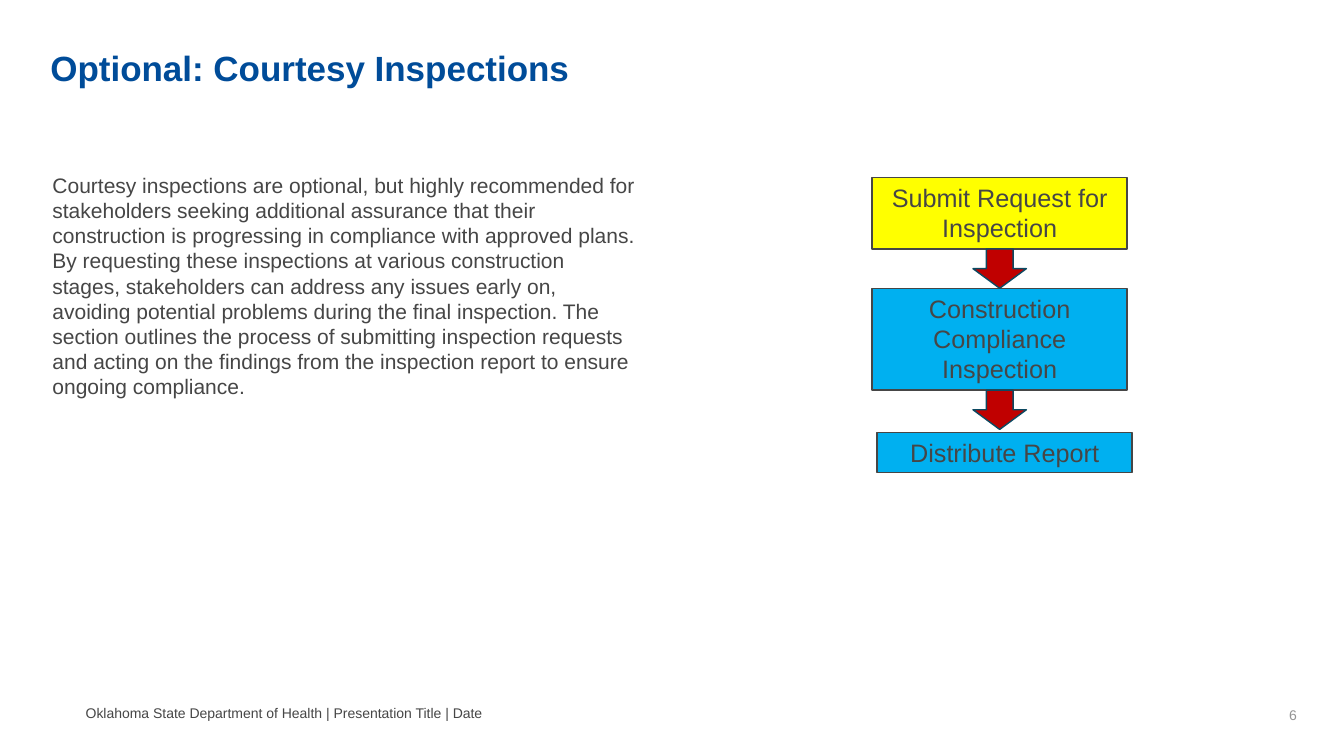
from pptx import Presentation
from pptx.dml.color import RGBColor
from pptx.enum.shapes import MSO_SHAPE
from pptx.enum.text import MSO_ANCHOR, PP_ALIGN
from pptx.util import Inches, Pt

INK = "464646"
BODY = (
    "Courtesy inspections are optional, but highly recommended for stakeholders seeking "
    "additional assurance that their construction is progressing in compliance with approved "
    "plans. By requesting these inspections at various construction stages, stakeholders can "
    "address any issues early on, avoiding potential problems during the final inspection. "
    "The section outlines the process of submitting inspection requests and acting on the "
    "findings from the inspection report to ensure ongoing compliance."
)
STEPS = [
    ("Submit Request for Inspection", "FFFF00", 0, 0, 0.71),
    ("Construction Compliance Inspection", "00B0F0", 0, 1.1, 1.01),
    ("Distribute Report", "00B0F0", 0.05, 2.53, 0.4),
]


def color(value):
    """Turn a hex string into a colour."""
    return RGBColor.from_string(value)


def write(holder, text, size, ink=INK, align=PP_ALIGN.LEFT, anchor=MSO_ANCHOR.TOP,
          inset=0.1, bold=False):
    """Fill a shape with one formatted paragraph."""
    frame = holder.text_frame
    frame.word_wrap = True
    frame.vertical_anchor = anchor
    frame.margin_left = Inches(inset)
    frame.margin_right = Inches(0.1)
    frame.margin_top = frame.margin_bottom = Inches(0.05)
    frame.text = text
    paragraph = frame.paragraphs[0]
    paragraph.alignment = align
    paragraph.font.name = "Arial"
    paragraph.font.size = Pt(size)
    paragraph.font.bold = bold
    paragraph.font.color.rgb = color(ink)


def add_text(slide, box, text, size, **style):
    """Add a text box at left, top, width, height."""
    write(slide.shapes.add_textbox(*map(Inches, box)), text, size, **style)


def add_block(slide, preset, box, fill, line):
    """Add a filled and outlined preset shape."""
    block = slide.shapes.add_shape(preset, *map(Inches, box))
    block.shadow.inherit = False
    block.fill.solid()
    block.fill.fore_color.rgb = color(fill)
    block.line.color.rgb = color(line)
    block.line.width = Pt(1)
    return block


def add_title(slide, box, text):
    """Place and format the title placeholder."""
    title = slide.shapes.title
    title.left, title.top, title.width, title.height = map(Inches, box)
    write(title, text, 25, ink="004C99", inset=0, bold=True)


def add_process(slide, left, top, width):
    """Stack the inspection steps with an arrow below each but the last."""
    arrow_length, arrow_breadth = 0.39, 0.53
    for label, fill, shift, offset, height in STEPS:
        step = add_block(slide, MSO_SHAPE.RECTANGLE,
                         (left + shift, top + offset, width, height), fill, INK)
        write(step, label, 18, align=PP_ALIGN.CENTER)
    for *_, offset, height in STEPS[:-1]:
        center = top + offset + height + arrow_length / 2
        arrow = add_block(slide, MSO_SHAPE.RIGHT_ARROW,
                          (left + (width - arrow_length) / 2, center - arrow_breadth / 2,
                           arrow_length, arrow_breadth), "C00000", "0C4961")
        arrow.rotation = 90


def add_footer(slide, left, top, width):
    """Place the footer line and the slide number."""
    add_text(slide, (left, top, 8.9, 0.22),
             "Oklahoma State Department of Health | Presentation Title | Date", 10,
             anchor=MSO_ANCHOR.MIDDLE, inset=0)
    add_text(slide, (left + width - 3, top + 0.02, 3, 0.22), "6", 10, ink="949494",
             align=PP_ALIGN.RIGHT, anchor=MSO_ANCHOR.MIDDLE)


def main():
    """Build and save the slide."""
    deck = Presentation()
    deck.slide_width, deck.slide_height = Inches(13.33), Inches(7.5)
    slide = deck.slides.add_slide(deck.slide_layouts[5])
    add_title(slide, (0.5, 0.41, 12.14, 0.92), "Optional: Courtesy Inspections")
    add_text(slide, (0.52, 1.66, 5.89, 2.53), BODY, 15, inset=0)
    add_process(slide, 8.65, 1.76, 2.53)
    add_footer(slide, 0.85, 6.96, 12.11)
    deck.save("out.pptx")


if __name__ == "__main__":
    main()
